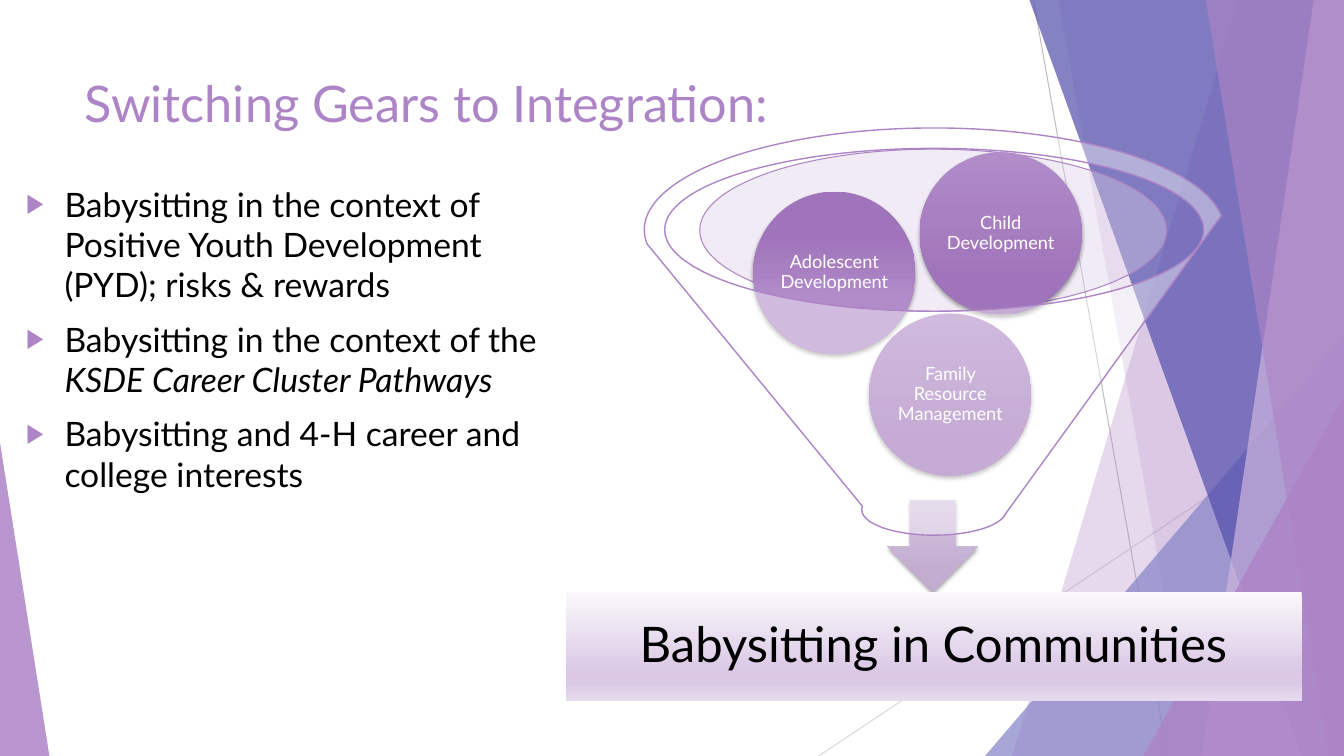
from lxml import etree
from pptx import Presentation
from pptx.dml.color import RGBColor
from pptx.enum import shapes, text
from pptx.oxml.ns import qn
from pptx.util import Inches, Pt

SLIDE_W, SLIDE_H = 13.33, 7.5
FONT = "Lato"
COLORS = {
    "purple": "AD84C6", "lilac": "CEB5DD", "periwinkle": "8784C7", "indigo": "524EAB",
    "mouth": "DBCEE5", "white": "FFFFFF", "black": "000000",
    "grey": "BFBFBF", "light_grey": "D9D9D9",
}

TITLE = "Switching Gears to Integration:"
BULLETS = [  # runs of (text, italic)
    [("Babysitting in the context of Positive Youth Development (PYD); risks & rewards", False)],
    [("Babysitting in the context of the ", False), ("KSDE Career Cluster Pathways", True)],
    [("Babysitting and 4-H career and college interests", False)],
]
RESULT = "Babysitting in Communities"

BALL_SIZE = 1.61
BALL_GRADIENT = [(0, "B18CC9"), (78, "A074BA")]
BALLS = [  # label, left, top, gradient
    ("Family Resource Management", 8.62, 3.11, BALL_GRADIENT),
    ("Adolescent Development", 7.47, 1.9, [(27, "A074BA"), (48, "A880C2"), (65, "B18CC9")]),
    ("Child Development", 9.12, 1.51, BALL_GRADIENT),
]
ARROW_GRADIENT = [(0, "D5C5E0"), (78, "C2ADD0")]
RESULT_GRADIENT = [(0, "FBF9FC"), (74, "DAC8E5"), (83, "DAC8E5"), (100, "E6DAEE")]

BACKDROP_LINES = [  # start, end, colour
    ((10.25, 0), (11.58, SLIDE_H), "grey"),
    ((SLIDE_W, 4.03), (8.12, SLIDE_H), "light_grey"),
]
BACKDROP = [  # strip: top x, bottom x; triangle: left, top, width, apex
    ("strip", (12.28, 10.04), "purple", 30),
    ("strip", (10.5, 11.83), "purple", 20),
    ("triangle", (9.77, 3.33, 3.56, 1), "periwinkle", 72),
    ("strip", (10.21, 12.91), "indigo", 70),
    ("strip", (13.03, 11.92), "lilac", 70),
    ("strip", (11.96, 13.18), "purple", 65),
    ("triangle", (11.34, 3.93, 1.99, 1), "purple", 80),
    ("triangle", (0, 4.39, 0.49, 0), "purple", 85),
]


def rgb(name):
    return RGBColor.from_string(COLORS[name])


def sub(parent, tag, **attrs):
    return etree.SubElement(parent, qn(tag), attrs)


def fill_solid(sp, color, alpha):
    sp.fill.solid()
    sp.fill.fore_color.rgb = rgb(color)
    clr = sp._element.spPr.find(qn("a:solidFill"))[0]
    sub(clr, "a:alpha", val=str(alpha * 1000))


def fill_gradient(sp, stops):
    """Fill from top to bottom with (percent, hex) stops."""
    sp.fill.gradient()
    sp.fill.gradient_angle = 270
    stop_list = sp._element.spPr.find(qn("a:gradFill")).find(qn("a:gsLst"))
    for old in list(stop_list):
        stop_list.remove(old)
    for pos, color in stops:
        sub(sub(stop_list, "a:gs", pos=str(pos * 1000)), "a:srgbClr", val=color)


def add_soft_shadow(sp):
    effects = sp._element.spPr.find(qn("a:effectLst"))
    shadow = sub(effects, "a:outerShdw", blurRad=str(Pt(3)), dist=str(Pt(2)),
                 dir="5400000", rotWithShape="0")
    clr = sub(shadow, "a:srgbClr", val=COLORS["black"])
    sub(clr, "a:alpha", val="35000")


def style_outline(sp, color=None, width=0.75):
    sp.shadow.inherit = False
    if color:
        sp.line.color.rgb = rgb(color)
        sp.line.width = Pt(width)
    else:
        sp.line.fill.background()


def add_preset(s, kind, left, top, width, height, line=None, line_width=0.75):
    sp = s.shapes.add_shape(kind, *map(Inches, (left, top, width, height)))
    style_outline(sp, line, line_width)
    return sp


def style_run(r, size, color):
    r.font.name = FONT
    r.font.size = Pt(size)
    r.font.color.rgb = rgb(color)


def set_label(sp, label, size, color, inset):
    tf = sp.text_frame
    tf.word_wrap = True
    tf.vertical_anchor = text.MSO_ANCHOR.MIDDLE
    tf.margin_left = tf.margin_right = tf.margin_top = tf.margin_bottom = Inches(inset)
    tf.text = label
    p = tf.paragraphs[0]
    p.alignment = text.PP_ALIGN.CENTER
    p.line_spacing = 0.9
    style_run(p.runs[0], size, color)


def add_backdrop(s):
    for start, end, color in BACKDROP_LINES:
        line = s.shapes.add_connector(shapes.MSO_CONNECTOR.STRAIGHT,
                                      *map(Inches, start + end))
        line.line.color.rgb = rgb(color)
        line.line.width = Pt(0.75)
        sub(line._element.spPr, "a:effectLst")
    for kind, geometry, color, alpha in BACKDROP:
        if kind == "strip":
            top_x, bottom_x = geometry
            corners = [(SLIDE_W, 0), (SLIDE_W, SLIDE_H), (bottom_x, SLIDE_H)]
            builder = s.shapes.build_freeform(Inches(top_x), 0)
            builder.add_line_segments([(Inches(x), Inches(y)) for x, y in corners])
            sp = builder.convert_to_shape()
            style_outline(sp)
        else:
            left, top, width, apex = geometry
            sp = add_preset(s, shapes.MSO_SHAPE.ISOSCELES_TRIANGLE,
                            left, top, width, SLIDE_H - top)
            sp.adjustments[0] = apex
        fill_solid(sp, color, alpha)


def place(sp, left, top, width, height):
    sp.left, sp.top, sp.width, sp.height = map(Inches, (left, top, width, height))
    tf = sp.text_frame
    tf.word_wrap = True
    tf.auto_size = text.MSO_AUTO_SIZE.NONE
    tf.vertical_anchor = text.MSO_ANCHOR.TOP
    return tf


def add_title_and_bullets(s):
    title, body = s.shapes.title, s.placeholders[1]
    for sp in (title, body):  # bring in front of the backdrop
        s.shapes._spTree.append(sp._element)

    tf = place(title, 0.74, 0.67, 9.4, 2.21)
    tf.text = TITLE
    tf.paragraphs[0].alignment = text.PP_ALIGN.LEFT
    style_run(tf.paragraphs[0].runs[0], 36, "purple")

    tf = place(body, 0.16, 1.77, 5.7, 5.21)
    for i, runs in enumerate(BULLETS):
        p = tf.add_paragraph() if i else tf.paragraphs[0]
        pPr = p._p.get_or_add_pPr()
        pPr.set("marL", str(Inches(0.38)))
        pPr.set("indent", str(Inches(-0.38)))
        sub(sub(pPr, "a:buClr"), "a:srgbClr", val=COLORS["purple"])
        sub(pPr, "a:buSzPct", val="80000")
        sub(pPr, "a:buChar", char="▶")
        p.space_before = Pt(10 if i else 0)
        for words, italic in runs:
            r = p.add_run()
            r.text = words
            style_run(r, 24, "black")
            r.font.italic = italic


def add_funnel_diagram(s):
    shape = shapes.MSO_SHAPE
    mouth = add_preset(s, shape.OVAL, 6.94, 1.48, 4.63, 1.61, "purple")
    fill_solid(mouth, "mouth", 40)

    arrow = add_preset(s, shape.DOWN_ARROW, 8.8, 4.96, 0.9, 0.91)
    fill_gradient(arrow, ARROW_GRADIENT)
    add_soft_shadow(arrow)

    result = add_preset(s, shape.RECTANGLE, 5.61, 5.87, 7.3, 1.08)
    fill_gradient(result, RESULT_GRADIENT)
    set_label(result, RESULT, 35, "black", 0.27)

    for label, left, top, stops in BALLS:
        ball = add_preset(s, shape.OVAL, left, top, BALL_SIZE, BALL_SIZE)
        fill_gradient(ball, stops)
        add_soft_shadow(ball)
        set_label(ball, label, 13, "white", 0.02)

    funnel = add_preset(s, shape.FUNNEL, 6.39, 1.27, 5.75, 4.04, "purple", 1)
    fill_solid(funnel, "white", 40)


def main():
    prs = Presentation()
    prs.slide_width, prs.slide_height = Inches(SLIDE_W), Inches(SLIDE_H)
    s = prs.slides.add_slide(prs.slide_layouts[1])
    add_backdrop(s)
    add_title_and_bullets(s)
    add_funnel_diagram(s)
    prs.save("out.pptx")


if __name__ == "__main__":
    main()
